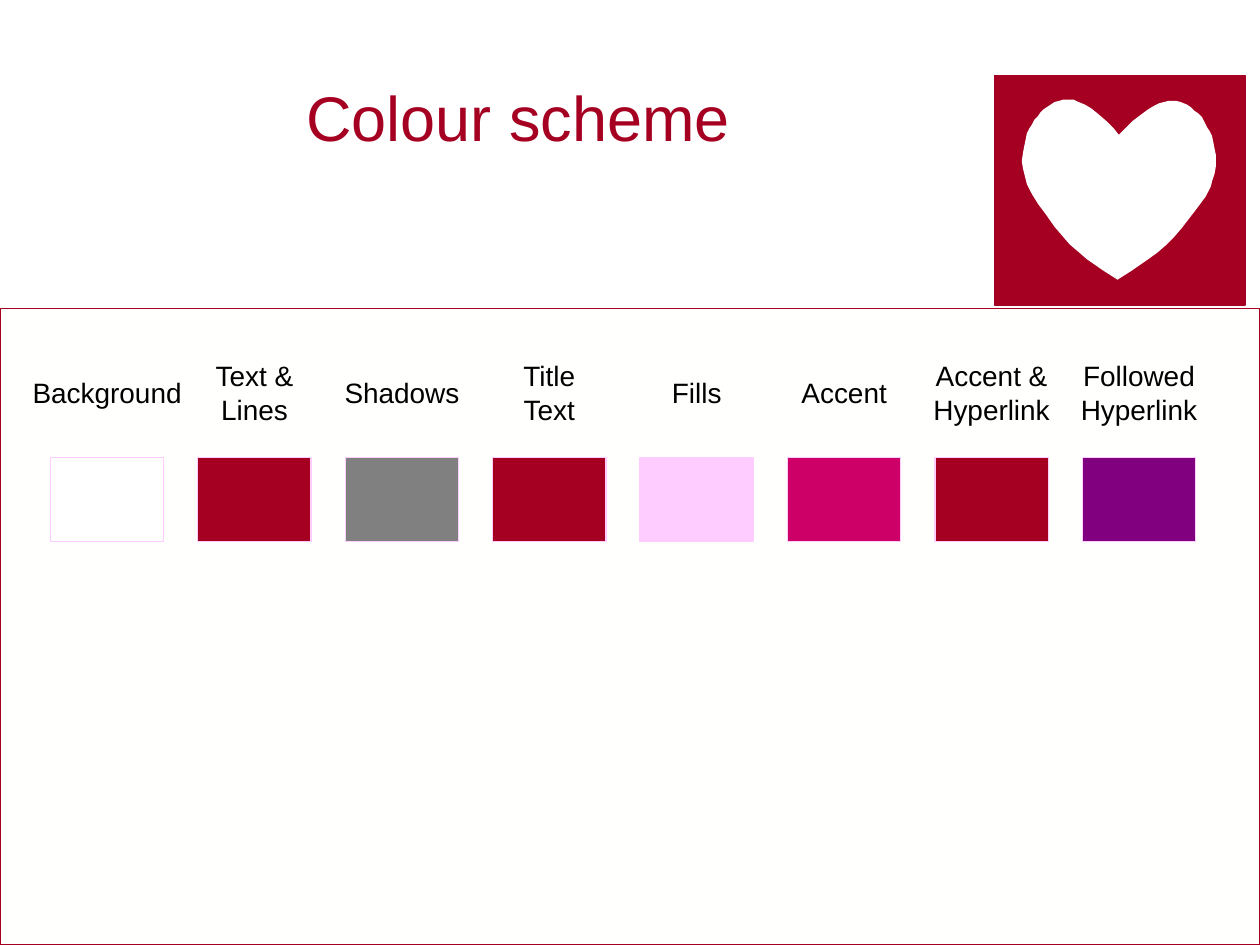
import pptx
import pptx.util
import pptx.dml.color
import pptx.enum.shapes
import pptx.enum.text
from pptx.util import Inches, Pt

RED, LILAC, WHITE, BLACK = "A50021", "FFCCFF", "FFFFFF", "000000"

# label (\n starts a paragraph, \v a line), label width, swatch colour
SWATCHES = [
    ("Background", 1.39, WHITE),
    ("Text &\nLines", 0.84, RED),
    ("Shadows", 1.11, "808080"),
    ("Title\vText", 0.63, RED),
    ("Fills", 0.59, LILAC),
    ("Accent", 0.88, "CC0066"),
    ("Accent &\nHyperlink", 1.12, RED),
    ("Followed\nHyperlink", 1.12, "800080"),
]
SWATCH_LEFT, SWATCH_TOP, PITCH = 0.4, 3.63, 1.17
SWATCH_W, SWATCH_H = 0.9, 0.67
LABEL_MIDDLE = 3.12

HEART = [
    (8.14, 1.11), (8.15, 1.06), (8.17, 1.02), (8.19, 0.99), (8.21, 0.95),
    (8.24, 0.92), (8.26, 0.89), (8.28, 0.87), (8.31, 0.85), (8.34, 0.83),
    (8.37, 0.81), (8.41, 0.8), (8.44, 0.79), (8.48, 0.79), (8.52, 0.79),
    (8.56, 0.81), (8.61, 0.83), (8.66, 0.86), (8.71, 0.9), (8.78, 0.96),
    (8.84, 1.02), (8.88, 1.07), (8.93, 1.02), (8.99, 0.96), (9.07, 0.9),
    (9.11, 0.87), (9.16, 0.84), (9.2, 0.82), (9.24, 0.81), (9.28, 0.8),
    (9.33, 0.8), (9.37, 0.81), (9.42, 0.83), (9.45, 0.85), (9.48, 0.88),
    (9.51, 0.9), (9.54, 0.93), (9.56, 0.97), (9.58, 1.01), (9.6, 1.04),
    (9.62, 1.08), (9.63, 1.13), (9.64, 1.18), (9.65, 1.23), (9.65, 1.32),
    (9.64, 1.38), (9.62, 1.44), (9.61, 1.48), (9.59, 1.52), (9.57, 1.56),
    (9.54, 1.6), (9.48, 1.68), (9.38, 1.81), (9.32, 1.88), (9.25, 1.95),
    (9.18, 2.01), (9.11, 2.06), (8.98, 2.15), (8.87, 2.22), (8.76, 2.15),
    (8.63, 2.06), (8.56, 2), (8.49, 1.94), (8.43, 1.87), (8.37, 1.8),
    (8.3, 1.7), (8.24, 1.62), (8.19, 1.54), (8.17, 1.5), (8.15, 1.46),
    (8.13, 1.38), (8.12, 1.34), (8.11, 1.28), (8.12, 1.21), (8.13, 1.16),
]


def rgb(color):
    return pptx.dml.color.RGBColor.from_string(color)


def paint(sp, fill, line=None):
    sp.shadow.inherit = False
    sp.fill.solid()
    sp.fill.fore_color.rgb = rgb(fill)
    if line:
        sp.line.color.rgb = rgb(line)
        sp.line.width = Pt(0.75)
    else:
        sp.line.fill.background()


def add_rect(s, left, top, width, height, fill, line):
    sp = s.shapes.add_shape(pptx.enum.shapes.MSO_SHAPE.RECTANGLE, Inches(left),
                            Inches(top), Inches(width), Inches(height))
    paint(sp, fill, line)


def write(tf, text, size, color):
    tf.text = text
    for p in tf.paragraphs:
        p.alignment = pptx.enum.text.PP_ALIGN.CENTER
        for r in p.runs:
            r.font.name = "Arial"
            r.font.size = Pt(size)
            r.font.color.rgb = rgb(color)


def add_heart(s):
    points = [(Inches(x), Inches(y)) for x, y in HEART]
    builder = s.shapes.build_freeform(*points[0])
    builder.add_line_segments(points[1:], close=True)
    paint(builder.convert_to_shape(), WHITE)


def add_label(s, text, center, width):
    height = 0.64 if "\n" in text or "\v" in text else 0.37
    sp = s.shapes.add_textbox(Inches(center - width / 2), Inches(LABEL_MIDDLE - height / 2),
                              Inches(width), Inches(height))
    tf = sp.text_frame
    write(tf, text, 16, BLACK)
    tf.margin_left = tf.margin_right = Inches(0.05)
    tf.word_wrap = False
    tf.auto_size = pptx.enum.text.MSO_AUTO_SIZE.NONE


def main():
    prs = pptx.Presentation()
    prs.slide_width, prs.slide_height = Inches(10), Inches(7.5)
    s = prs.slides.add_slide(prs.slide_layouts[5])

    title = s.shapes.title
    title.left, title.top = Inches(0.5), Inches(0.3)
    title.width, title.height = Inches(7.22), Inches(1.25)
    write(title.text_frame, "Colour scheme", 36, RED)
    title.text_frame.vertical_anchor = pptx.enum.text.MSO_ANCHOR.MIDDLE

    add_rect(s, 7.89, 0.6, 1.99, 1.82, RED, RED)
    add_heart(s)
    add_rect(s, 0, 2.45, 10, 5.05, "FFFFFE", RED)

    for i, (text, label_width, color) in enumerate(SWATCHES):
        left = SWATCH_LEFT + i * PITCH
        add_rect(s, left, SWATCH_TOP, SWATCH_W, SWATCH_H, color, LILAC)
        add_label(s, text, left + SWATCH_W / 2, label_width)

    prs.save("out.pptx")


if __name__ == "__main__":
    main()
